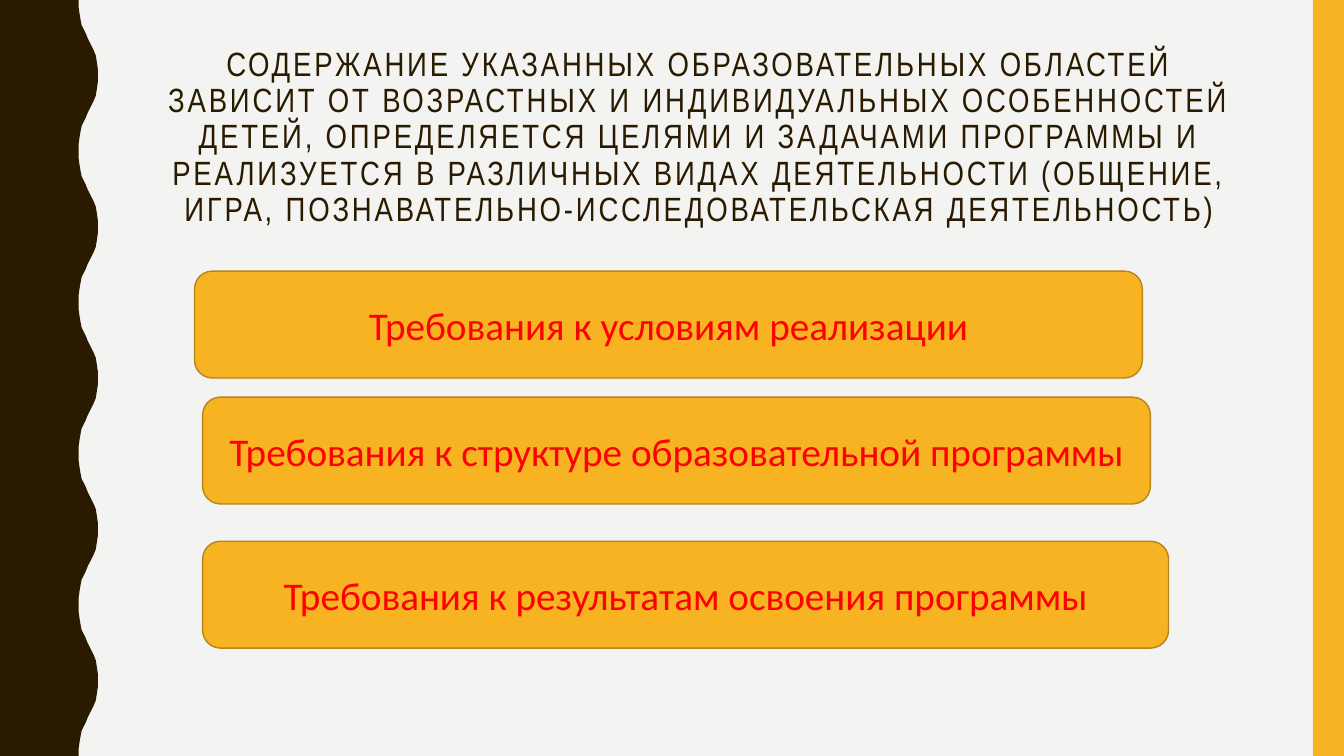
"""Build a slide with a wavy left edge, a title and three requirement bars."""
from dataclasses import dataclass

from pptx import Presentation
from pptx.dml.color import RGBColor
from pptx.enum.shapes import MSO_SHAPE as Preset
from pptx.enum.text import MSO_ANCHOR as Anchor, MSO_AUTO_SIZE as AutoSize, PP_ALIGN as Align
from pptx.util import Pt

PX = 9144
WIDTH, HEIGHT = 1333, 750
WAVE_PERIOD = 150
COLORS = {"paper": "F3F3F2", "brown": "2A1A00", "amber": "F8B323",
          "edge": "B7841A", "red": "FF0000"}
HALF_WAVE = [(78, 0), (78, 7), (79, 14), (80, 20), (81, 25), (83, 29), (85, 33), (87, 38),
             (89, 42), (91, 46), (93, 50), (95, 55), (96, 61), (97, 68), (97, 75)]
TITLE = ("СОДЕРЖАНИЕ УКАЗАННЫХ ОБРАЗОВАТЕЛЬНЫХ ОБЛАСТЕЙ ЗАВИСИТ ОТ ВОЗРАСТНЫХ "
         "И ИНДИВИДУАЛЬНЫХ ОСОБЕННОСТЕЙ ДЕТЕЙ, ОПРЕДЕЛЯЕТСЯ ЦЕЛЯМИ И ЗАДАЧАМИ "
         "ПРОГРАММЫ И РЕАЛИЗУЕТСЯ В РАЗЛИЧНЫХ ВИДАХ ДЕЯТЕЛЬНОСТИ (ОБЩЕНИЕ, ИГРА, "
         "ПОЗНАВАТЕЛЬНО-ИССЛЕДОВАТЕЛЬСКАЯ ДЕЯТЕЛЬНОСТЬ)")


@dataclass(frozen=True)
class Bar:
    left: int
    top: int
    width: int
    text: str
    height: int = 106


BARS = [
    Bar(193, 269, 940, "Требования к условиям реализации"),
    Bar(201, 394, 940, "Требования к структуре образовательной программы"),
    Bar(201, 537, 958, "Требования к результатам освоения программы"),
]


def color(name: str) -> RGBColor:
    return RGBColor.from_string(COLORS[name])


def paint(shape, fill: str, edge: str | None = None) -> None:
    shape.shadow.inherit = False
    shape.fill.solid()
    shape.fill.fore_color.rgb = color(fill)
    if edge:
        shape.line.color.rgb = color(edge)
        shape.line.width = Pt(1)
    else:
        shape.line.fill.background()


def write(shape, text: str, anchor: Anchor, ink: str, **font_format):
    frame = shape.text_frame
    frame.word_wrap = True
    frame.auto_size = AutoSize.NONE
    frame.vertical_anchor = anchor
    para = frame.paragraphs[0]
    para.alignment = Align.CENTER
    span = para.add_run()
    span.text = text
    span.font.color.rgb = color(ink)
    for name, value in font_format.items():
        setattr(span.font, name, value)
    return para


def draw_wave(page) -> None:
    period = HALF_WAVE + [(x, WAVE_PERIOD - y) for x, y in HALF_WAVE[-2::-1]]
    crest = [(x, y + start) for start in range(0, HEIGHT, WAVE_PERIOD) for x, y in period]
    builder = page.shapes.build_freeform(0, 0, scale=PX)
    builder.add_line_segments(crest + [(0, HEIGHT)], close=True)
    paint(builder.convert_to_shape(), "brown")


def draw_stripe(page) -> None:
    stripe = page.shapes.add_shape(Preset.RECTANGLE, 1302 * PX, 0, 31 * PX, HEIGHT * PX)
    paint(stripe, "amber")


def draw_title(page) -> None:
    title = page.shapes.title
    place = {"left": 137, "top": 42, "width": 1113, "height": 163}
    for name, value in place.items():
        setattr(title, name, value * PX)
    para = write(title, TITLE, Anchor.TOP, "brown", size=Pt(24), name="Arial Narrow")
    para.line_spacing = 0.9
    para.runs[0].font._element.set("spc", "200")


def draw_bar(page, bar: Bar) -> None:
    box = page.shapes.add_shape(Preset.ROUNDED_RECTANGLE, bar.left * PX, bar.top * PX,
                                bar.width * PX, bar.height * PX)
    paint(box, "amber", "edge")
    write(box, bar.text, Anchor.MIDDLE, "red", size=Pt(28), name="Calibri")


def main() -> None:
    deck = Presentation()
    deck.slide_width, deck.slide_height = WIDTH * PX, HEIGHT * PX
    page = deck.slides.add_slide(deck.slide_layouts[5])
    page.background.fill.solid()
    page.background.fill.fore_color.rgb = color("paper")
    draw_wave(page)
    draw_stripe(page)
    draw_title(page)
    for bar in BARS:
        draw_bar(page, bar)
    deck.save("out.pptx")


if __name__ == "__main__":
    main()
